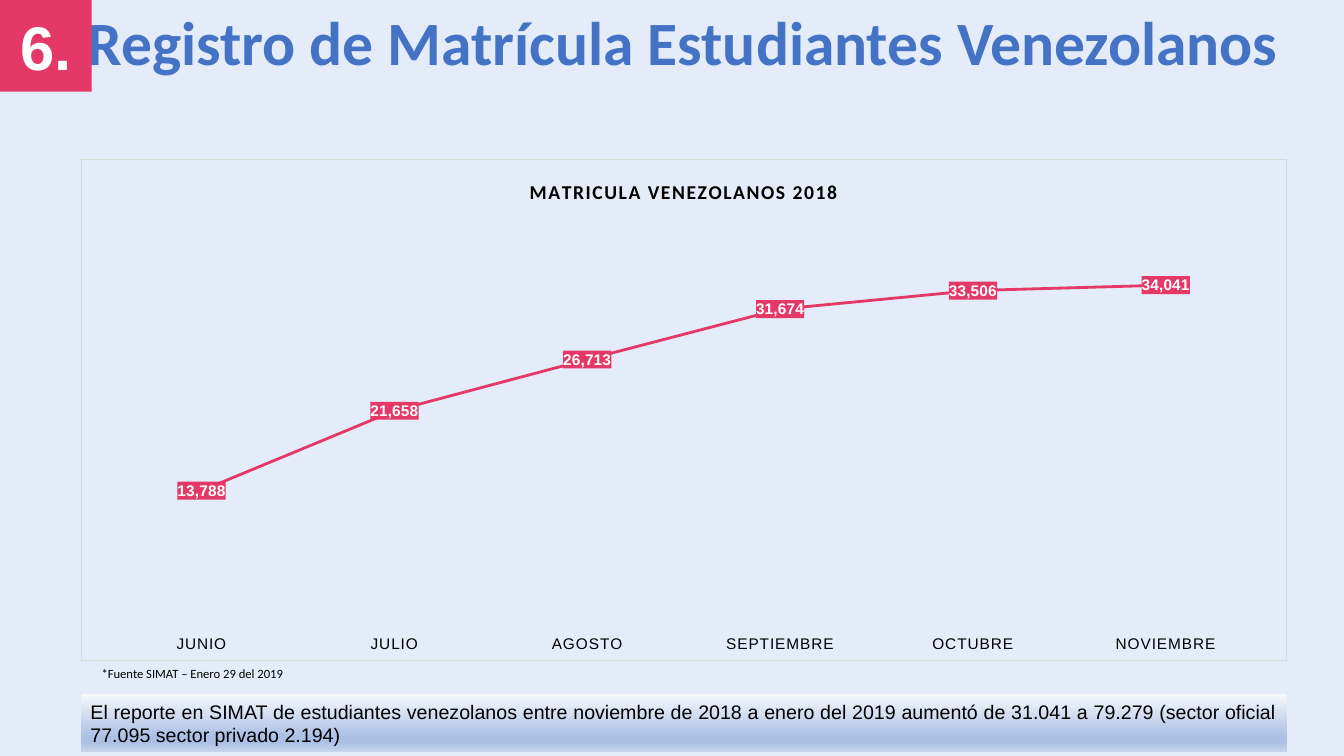
from dataclasses import dataclass, field
from typing import Any

from pptx import Presentation
from pptx.chart.data import CategoryChartData
from pptx.dml.color import RGBColor
from pptx.enum.chart import XL_CHART_TYPE, XL_LABEL_POSITION, XL_MARKER_STYLE, XL_TICK_MARK
from pptx.enum.text import MSO_ANCHOR, MSO_AUTO_SIZE, PP_ALIGN
from pptx.oxml import parse_xml
from pptx.oxml.ns import nsdecls
from pptx.util import Cm, Pt

BACKGROUND = RGBColor(0xE3, 0xEC, 0xF8)
BLUE = RGBColor(0x44, 0x72, 0xC4)
PINK = RGBColor(0xE4, 0x38, 0x66)
BORDER = RGBColor(0xD9, 0xD9, 0xD9)
WHITE = RGBColor(0xFF, 0xFF, 0xFF)
BLACK = RGBColor(0, 0, 0)
REPORT_STOPS = {0: "F6F8FC", 74: "ABC0E4", 83: "ABC0E4", 100: "C7D5ED"}

ENROLMENT = {
    "JUNIO": 13788, "JULIO": 21658, "AGOSTO": 26713,
    "SEPTIEMBRE": 31674, "OCTUBRE": 33506, "NOVIEMBRE": 34041,
}


@dataclass
class Box:
    left: float
    top: float
    width: float
    height: float

    def lengths(self) -> tuple:
        return Cm(self.left), Cm(self.top), Cm(self.width), Cm(self.height)


@dataclass
class TextBlock:
    text: str
    box: Box
    size: float
    font: str = "Arial"
    color: RGBColor = BLACK
    bold: bool = False
    frame: dict = field(default_factory=dict)
    paragraph: dict = field(default_factory=dict)


CHART_BOX = Box(2.03, 4.01, 30.4, 12.65)
TITLE = TextBlock(
    "Registro de Matrícula Estudiantes Venezolanos", Box(1.73, 0.18, 30.99, 1.93),
    44, "Calibri", BLUE, True, {"vertical_anchor": MSO_ANCHOR.BOTTOM},
    {"alignment": PP_ALIGN.CENTER, "line_spacing": 0.9})
REPORT = TextBlock(
    "El reporte en SIMAT de estudiantes venezolanos entre noviembre de 2018 a enero "
    "del 2019 aumentó de 31.041 a 79.279 (sector oficial 77.095 sector privado 2.194) ",
    Box(2.03, 17.5, 30.4, 1.45), 14,
    frame={"vertical_anchor": MSO_ANCHOR.TOP}, paragraph={"alignment": PP_ALIGN.JUSTIFY})
NUMBER = TextBlock(
    "6.", Box(0, 0, 2.31, 2.31), 44, color=WHITE, bold=True,
    frame={"vertical_anchor": MSO_ANCHOR.MIDDLE}, paragraph={"alignment": PP_ALIGN.CENTER})
SOURCE = TextBlock("*Fuente SIMAT – Enero 29 del 2019", Box(2.31, 16.66, 11.35, 0.64), 9, "Calibri")


def set_attrs(obj: Any, values: dict) -> None:
    for name, value in values.items():
        setattr(obj, name, value)


def set_font(font: Any, size: float, name: str, color: RGBColor, bold: bool = False) -> None:
    set_attrs(font, {"size": Pt(size), "name": name, "bold": bold})
    font.color.rgb = color


def write(sp: Any, block: TextBlock) -> None:
    tf = sp.text_frame
    set_attrs(tf, {"word_wrap": True, "auto_size": MSO_AUTO_SIZE.NONE, **block.frame})
    p = tf.paragraphs[0]
    set_attrs(p, block.paragraph)
    r = p.add_run()
    r.text = block.text
    set_font(r.font, block.size, block.font, block.color, block.bold)


def add_rectangle(s: Any, block: TextBlock) -> Any:
    sp = s.shapes.add_shape(1, *block.box.lengths())
    sp.shadow.inherit = False
    sp.line.fill.background()
    write(sp, block)
    return sp


def fill_report(sp: Any) -> None:
    """Replace the fill with a vertical gradient of four stops."""
    sp.fill.background()
    stops = "".join(
        f'<a:gs pos="{pos * 1000}"><a:srgbClr val="{color}"/></a:gs>'
        for pos, color in REPORT_STOPS.items())
    gradient = parse_xml(
        f'<a:gradFill {nsdecls("a")} rotWithShape="1"><a:gsLst>{stops}</a:gsLst>'
        '<a:lin ang="5400000" scaled="0"/></a:gradFill>')
    no_fill = sp.element.spPr.xpath("./a:noFill")[0]
    no_fill.getparent().replace(no_fill, gradient)


def chart_sp_pr(content: str) -> Any:
    return parse_xml(f'<c:spPr {nsdecls("c", "a")}>{content}</c:spPr>')


def style_frame(chart: Any) -> None:
    """Set the chart border, the plot position and the letter spacing."""
    root = chart.element
    root.xpath("./c:chart")[0].addnext(chart_sp_pr(
        f'<a:noFill/><a:ln w="{Pt(0.75)}"><a:solidFill><a:srgbClr val="{BORDER}"/>'
        '</a:solidFill></a:ln>'))
    for layout in root.xpath("./c:chart/c:plotArea/c:layout"):
        layout.getparent().remove(layout)
    place = {"x": 0.02, "y": 0.13, "w": 0.96, "h": 0.81}
    values = "".join(f'<c:{name} val="{value}"/>' for name, value in place.items())
    root.xpath("./c:chart/c:plotArea")[0].insert(0, parse_xml(
        f'<c:layout {nsdecls("c")}><c:manualLayout><c:layoutTarget val="inner"/>'
        f'<c:xMode val="edge"/><c:yMode val="edge"/>{values}</c:manualLayout></c:layout>'))
    root.xpath(".//c:title//a:rPr")[0].set("spc", "100")
    root.xpath(".//c:catAx/c:txPr//a:defRPr")[0].set("spc", "50")


def add_enrolment_chart(s: Any) -> None:
    data = CategoryChartData(number_format="#,##0")
    data.categories = list(ENROLMENT)
    data.add_series("Series 1", list(ENROLMENT.values()))
    chart = s.shapes.add_chart(XL_CHART_TYPE.LINE, *CHART_BOX.lengths(), data).chart
    set_font(chart.font, 10, "Calibri", BLACK)
    chart.has_legend = False

    chart.has_title = True
    chart.chart_title.include_in_layout = False
    r = chart.chart_title.text_frame.paragraphs[0].add_run()
    r.text = "MATRICULA VENEZOLANOS 2018"
    set_font(r.font, 14, "Calibri", BLACK, True)

    months = chart.category_axis
    set_attrs(months, {"major_tick_mark": XL_TICK_MARK.NONE, "minor_tick_mark": XL_TICK_MARK.NONE})
    months.format.line.fill.background()
    set_font(months.tick_labels.font, 11, "Arial", BLACK)
    set_attrs(chart.value_axis, {
        "visible": False, "has_major_gridlines": False,
        "minimum_scale": 0, "maximum_scale": 40000})

    chart.plots[0].vary_by_categories = False
    series = chart.plots[0].series[0]
    series.smooth = False
    series.marker.style = XL_MARKER_STYLE.NONE
    series.format.line.color.rgb = PINK
    series.format.line.width = Pt(2)
    labels = series.data_labels
    set_attrs(labels, {
        "show_value": True, "position": XL_LABEL_POSITION.CENTER,
        "number_format": "#,##0", "number_format_is_linked": False})
    set_font(labels.font, 11, "Arial", WHITE, True)
    chart.element.xpath(".//c:ser/c:dLbls/c:txPr")[0].addprevious(chart_sp_pr(
        f'<a:solidFill><a:srgbClr val="{PINK}"/></a:solidFill>'))
    style_frame(chart)


def main() -> None:
    prs = Presentation()
    set_attrs(prs, {"slide_width": Cm(33.87), "slide_height": Cm(19.05)})
    s = prs.slides.add_slide(prs.slide_layouts[5])
    s.background.fill.solid()
    s.background.fill.fore_color.rgb = BACKGROUND

    title = s.shapes.title
    set_attrs(title, dict(zip(("left", "top", "width", "height"), TITLE.box.lengths())))
    write(title, TITLE)
    add_enrolment_chart(s)
    fill_report(add_rectangle(s, REPORT))
    number = add_rectangle(s, NUMBER)
    number.fill.solid()
    number.fill.fore_color.rgb = PINK
    write(s.shapes.add_textbox(*SOURCE.box.lengths()), SOURCE)
    prs.save("out.pptx")


if __name__ == "__main__":
    main()
